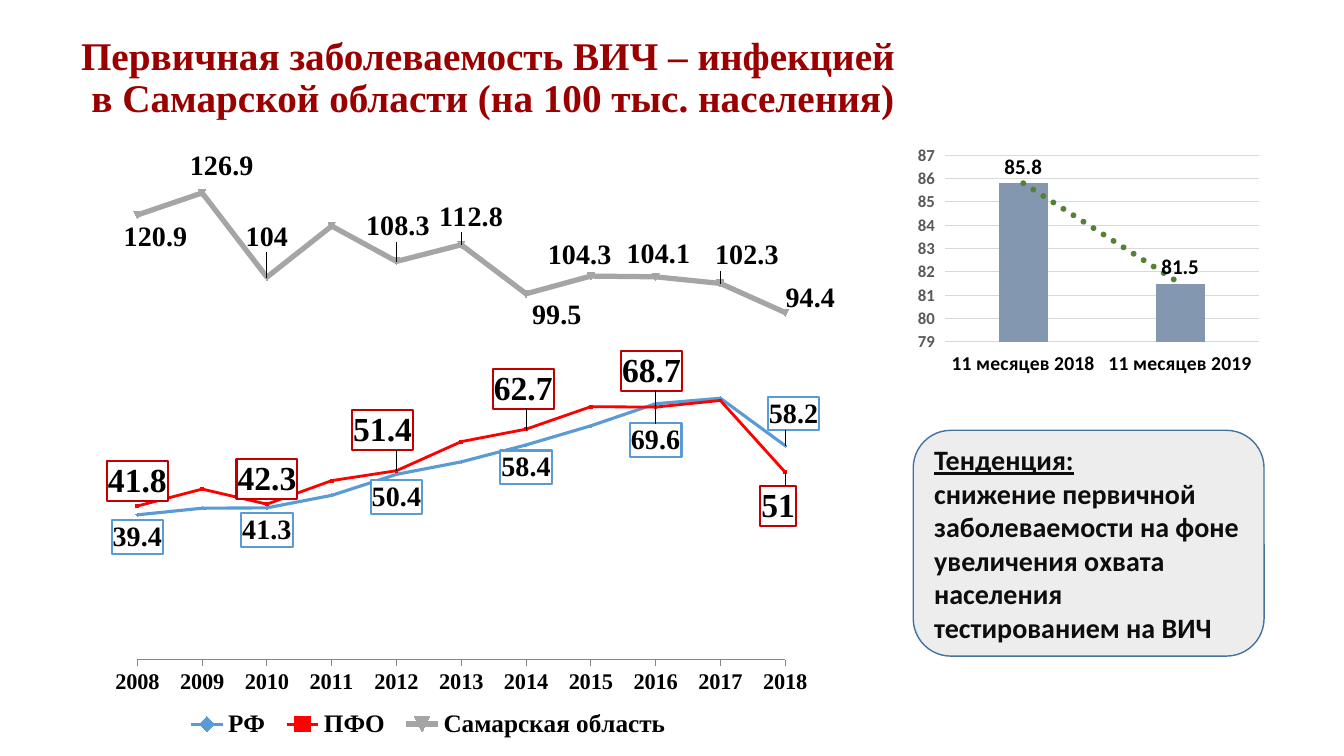
from copy import deepcopy

from lxml import etree
from pptx import Presentation
from pptx.chart.data import CategoryChartData
from pptx.dml.color import RGBColor
from pptx.enum.chart import XL_CHART_TYPE, XL_LABEL_POSITION, XL_LEGEND_POSITION
from pptx.enum.chart import XL_MARKER_STYLE, XL_TICK_LABEL_POSITION, XL_TICK_MARK
from pptx.enum.shapes import MSO_SHAPE
from pptx.enum.text import MSO_ANCHOR, MSO_AUTO_SIZE, PP_ALIGN
from pptx.oxml import parse_xml
from pptx.oxml.ns import nsdecls, qn
from pptx.util import Pt

LINES = XL_CHART_TYPE.LINE_MARKERS
COLUMNS = XL_CHART_TYPE.COLUMN_CLUSTERED
DIAMOND, SQUARE = XL_MARKER_STYLE.DIAMOND, XL_MARKER_STYLE.SQUARE
NONE, OUT = XL_TICK_MARK.NONE, XL_TICK_MARK.OUTSIDE
LOW = XL_TICK_LABEL_POSITION.LOW
ABOVE = XL_LABEL_POSITION.OUTSIDE_END
BOTTOM = XL_LEGEND_POSITION.BOTTOM
ROUND = MSO_SHAPE.ROUNDED_RECTANGLE
MIDDLE, FIXED = MSO_ANCHOR.MIDDLE, MSO_AUTO_SIZE.NONE
LEFT, CENTER = PP_ALIGN.LEFT, PP_ALIGN.CENTER

HEX = dict(white="FFFFFF", black="000000", title="9A0000", blue="5B9BD5",
           red="FF0000", dark="C00000", gray="A5A5A5", axis="868686",
           grid="D9D9D9", scale="595959", bar="8497B0", green="548235",
           panel="EDEDED", edge="43739E", ink="0D0D0D")
SERIF, SANS = "Times New Roman", "Calibri"

YEARS = [str(year) for year in range(2008, 2019)]
# Label shifts are points right and down from the data point, by index.
REGIONS = [
    dict(name="РФ", color="blue", width=2.25, mark=DIAMOND, size=20, box="blue",
         vals=(39.4, 41.2, 41.3, 44.7, 50.4, 53.8, 58.4, 63.6, 69.6, 71.1, 58.2),
         shifts={0: (0, 16), 2: (0, 16), 4: (0, 16), 6: (0, 16), 8: (0, 26),
                 10: (6, -23)}),
    dict(name="ПФО", color="red", width=2, mark=SQUARE, size=24, box="dark",
         vals=(41.8, 46.4, 42.3, 48.7, 51.4, 59.3, 62.7, 68.8, 68.7, 70.5, 51),
         shifts={0: (0, -18), 2: (0, -18), 4: (-10, -29), 6: (-2, -29),
                 8: (-3, -26), 10: (-5, 24)}),
    dict(name="Самарская область", color="gray", width=3.75, mark=None, size=20,
         box=None,
         vals=(120.9, 126.9, 104, 117.9, 108.3, 112.8, 99.5, 104.3, 104.1, 102.3,
               94.4),
         shifts={0: (13, 16), 1: (14, -19), 2: (0, -29), 4: (1, -25), 5: (7, -20),
                 6: (22, 15), 7: (-8, -15), 8: (2, -16), 9: (19, -20),
                 10: (18, -10)}),
]


def paint(part, color):
    """Give a fill or a line format a solid colour."""
    fill = getattr(part, "fill", part)
    fill.solid()
    fill.fore_color.rgb = RGBColor.from_string(HEX[color])


def style(font, size, color="black", face=SERIF, bold=True, under=None):
    font.size, font.name, font.bold, font.underline = Pt(size), face, bold, under
    font.color.rgb = RGBColor.from_string(HEX[color])


def write(para, text, align=LEFT, **fmt):
    """Fill a paragraph; line breaks take the format of the runs."""
    para.text = text
    para.alignment = align
    for run in para.runs:
        style(run.font, **fmt)
    for gap in para._p.findall(qn("a:br")):
        gap.insert(0, deepcopy(para.runs[0]._r.rPr))


def node(tag, body):
    return parse_xml(f"<c:{tag} {nsdecls('c', 'a')}>{body}</c:{tag}>")


def solid(color):
    return f'<a:solidFill><a:srgbClr val="{HEX[color]}"/></a:solidFill>'


def layout(x, y, w, h, inner=False):
    target = '<c:layoutTarget val="inner"/>' if inner else ""
    sides = "".join(f'<c:{key} val="{val}"/>' for key, val in zip("xywh", (x, y, w, h)))
    return node("layout", "<c:manualLayout>" + target + '<c:xMode val="edge"/>'
                '<c:yMode val="edge"/>' + sides + "</c:manualLayout>")


def labels(size, box, shifts, wide, high):
    """Build value labels, each set off from its point."""
    def flags(value):
        return "".join(f'<c:show{key} val="{value if key == "Val" else 0}"/>' for key in
                       ("LegendKey", "Val", "CatName", "SerName", "Percent",
                        "BubbleSize"))

    frame = (f'<c:spPr>{solid("white")}<a:ln w="{Pt(1.5)}">{solid(box)}</a:ln></c:spPr>'
             if box else "<c:spPr><a:noFill/><a:ln><a:noFill/></a:ln></c:spPr>")
    text = (f'<c:txPr><a:bodyPr/><a:p><a:pPr><a:defRPr sz="{size * 100}" b="1">'
            f'{solid("black")}<a:latin typeface="{SERIF}"/></a:defRPr></a:pPr>'
            '<a:endParaRPr/></a:p></c:txPr><c:dLblPos val="ctr"/>')
    items = "".join(
        f'<c:dLbl><c:idx val="{idx}"/><c:layout><c:manualLayout>'
        f'<c:x val="{dx / wide:.4f}"/><c:y val="{dy / high:.4f}"/>'
        f'</c:manualLayout></c:layout>{frame}{text}{flags(1)}</c:dLbl>'
        for idx, (dx, dy) in shifts.items())
    return node("dLbls", items + frame + text + flags(0))


class Deck:
    """Holds the deck's style and its current slide."""

    def __init__(self):
        self.deck = Presentation()
        self.deck.slide_width, self.deck.slide_height = Pt(960), Pt(540)
        self.slide = self.deck.slides.add_slide(self.deck.slide_layouts[5])

    def title(self, text, x, y, w, h):
        head = self.slide.shapes.title
        head.left, head.top, head.width, head.height = map(Pt, (x, y, w, h))
        frame = head.text_frame
        frame.vertical_anchor, frame.auto_size = MIDDLE, FIXED
        para = frame.paragraphs[0]
        write(para, text, CENTER, size=28, color="title")
        para.line_spacing = 0.9

    def chart(self, kind, cats, rows, box, plot):
        data = CategoryChartData()
        data.categories = cats
        for name, vals in rows:
            data.add_series(name, vals)
        chart = self.slide.shapes.add_chart(kind, *map(Pt, box), data).chart
        chart.has_title = chart.has_legend = False
        style(chart.font, 12, face=SANS, bold=False)
        area = chart._chartSpace.chart.plotArea
        for old in area.findall(qn("c:layout")):
            area.remove(old)
        area.insert(0, layout(*plot, inner=True))
        chart._chartSpace.chart.addnext(node(
            "spPr", solid("white") + "<a:ln><a:noFill/></a:ln>"))
        chart.plots[0].vary_by_categories = False
        return chart

    def axis(self, axis, tick, line, **fmt):
        axis.major_tick_mark, axis.minor_tick_mark = tick, NONE
        axis.tick_label_position = LOW
        style(axis.tick_labels.font, **fmt)
        if line:
            paint(axis.format.line, line)
            axis.format.line.width = Pt(0.75)
        else:
            axis.format.line.fill.background()

    def trend(self, x, y, w, h):
        """Draw the yearly line chart of the three regions."""
        chart = self.chart(LINES, YEARS, [(row["name"], row["vals"]) for row in REGIONS],
                           (x, y, w, h), (0.038, 0.039, 0.673, 0.81))
        self.axis(chart.category_axis, OUT, "axis", size=16)
        scale = chart.value_axis
        scale.minimum_scale, scale.maximum_scale = 0, 140
        scale.has_major_gridlines = scale.visible = False
        etree.SubElement(scale._element, qn("c:crossBetween")).set("val", "midCat")
        for row, line in zip(REGIONS, chart.plots[0].series):
            line.smooth = False
            paint(line.format.line, row["color"])
            line.format.line.width = Pt(row["width"])
            paint(line.marker.format, row["color"])
            paint(line.marker.format.line, row["color"])
            if row["mark"]:
                line.marker.style, line.marker.size = row["mark"], 2
            line._element.find(qn("c:cat")).addprevious(
                labels(row["size"], row["box"], row["shifts"], w, h))
        chart.has_legend = True
        legend = chart.legend
        legend.position, legend.include_in_layout = BOTTOM, False
        style(legend.font, 18)
        for old in legend._element.findall(qn("c:layout")):
            legend._element.remove(old)
        legend._element.find(qn("c:legendPos")).addnext(layout(0.08, 0.92, 0.52, 0.06))

    def bars(self, *box):
        """Draw the two-period column chart with its dotted trend."""
        chart = self.chart(COLUMNS, ("11 месяцев 2018", "11 месяцев 2019"),
                           [("Series 1", (85.8, 81.5))], box,
                           (0.143, 0.098, 0.846, 0.756))
        self.axis(chart.category_axis, NONE, "grid", size=14, face=SANS)
        scale = chart.value_axis
        self.axis(scale, NONE, None, size=12, color="scale", face=SANS)
        scale.minimum_scale, scale.maximum_scale, scale.major_unit = 79, 87, 1
        paint(scale.major_gridlines.format.line, "grid")
        scale.major_gridlines.format.line.width = Pt(0.75)
        plot = chart.plots[0]
        plot.gap_width, plot.overlap = 219, -27
        series = plot.series[0]
        paint(series.format, "bar")
        tags = series.data_labels
        tags.show_value, tags.position = True, ABOVE
        style(tags.font, 15, face=SANS)
        series._element.find(qn("c:cat")).addprevious(node(
            "trendline", f'<c:spPr><a:ln w="{Pt(4.25)}" cap="rnd">{solid("green")}'
            '<a:prstDash val="sysDot"/></a:ln></c:spPr><c:trendlineType val="linear"/>'
            '<c:dispRSqr val="0"/><c:dispEq val="0"/>'))

    def panel(self, head, text, *box):
        card = self.slide.shapes.add_shape(ROUND, *map(Pt, box))
        card.shadow.inherit = False
        paint(card, "panel")
        paint(card.line, "edge")
        card.line.width = Pt(1)
        frame = card.text_frame
        frame.word_wrap, frame.vertical_anchor = True, MIDDLE
        fmt = dict(size=20, color="ink", face=SANS)
        write(frame.paragraphs[0], head, under=True, **fmt)
        write(frame.add_paragraph(), text, **fmt)


if __name__ == "__main__":
    show = Deck()
    show.title("Первичная заболеваемость ВИЧ – инфекцией \n"
               "в Самарской области (на 100 тыс. населения)", 44, 8, 616, 96.5)
    show.trend(72, 85.7, 687.6, 454.3)
    show.bars(637, 93.6, 265, 176.4)
    show.panel("Тенденция:", "снижение первичной заболеваемости на фоне увеличения "
               "охвата населения тестированием на ВИЧ", 652.3, 307.4, 250.6, 161.3)
    show.deck.save("out.pptx")
